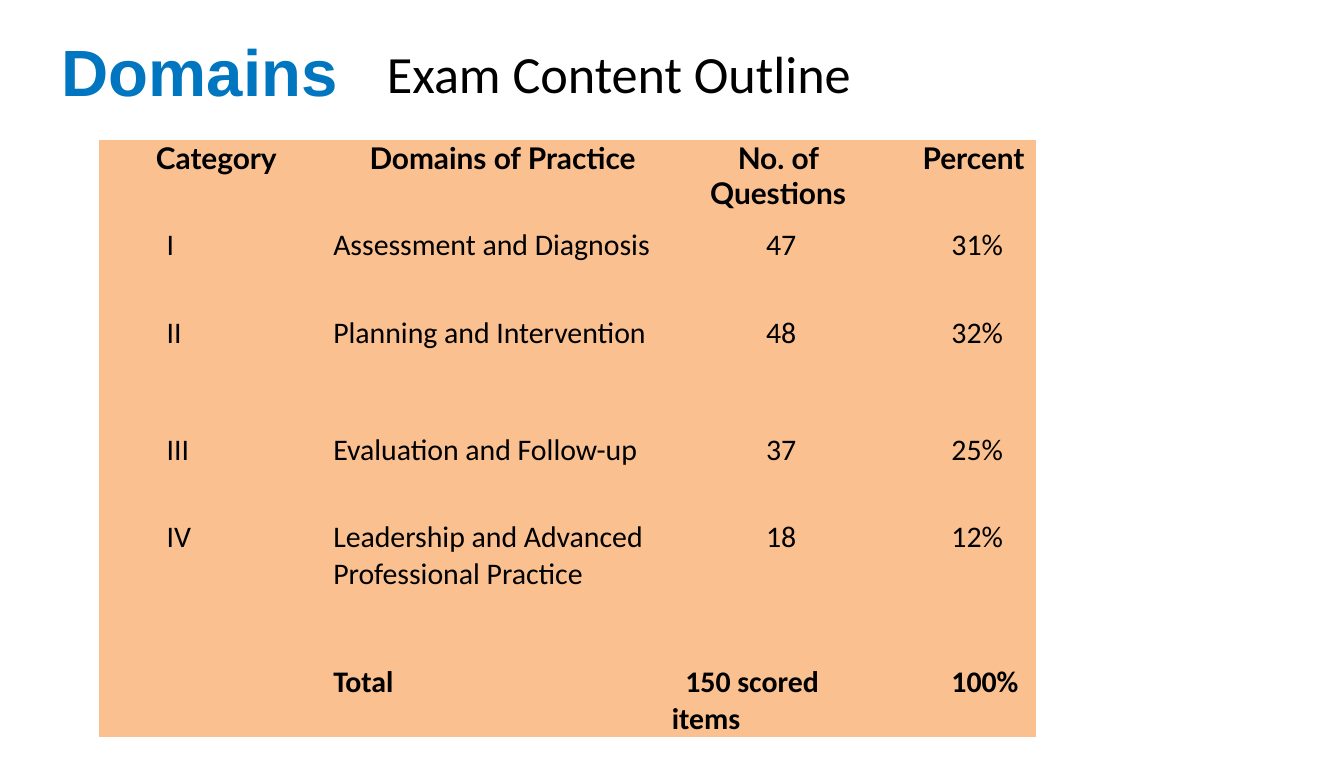
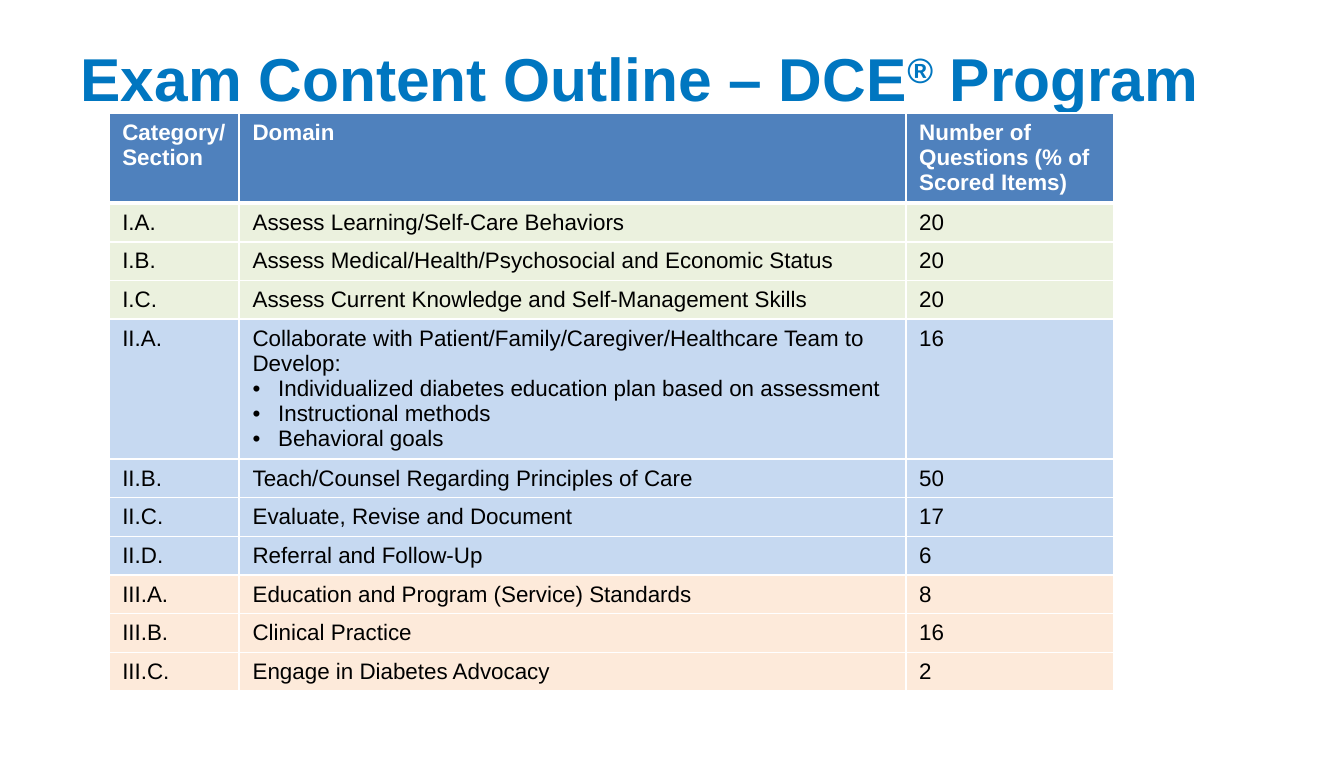
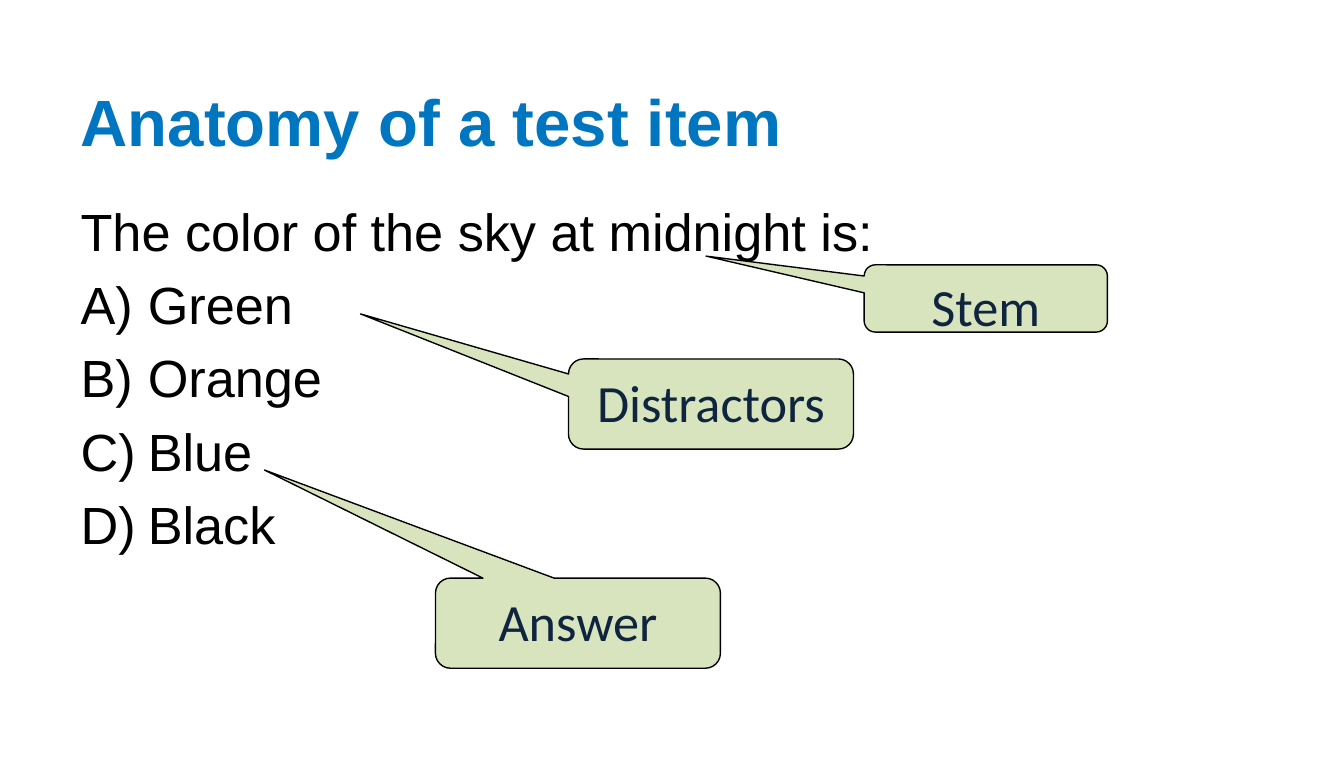
import lxml.etree
import pptx
import pptx.dml.color
import pptx.enum.shapes
import pptx.enum.text
import pptx.oxml.ns
import pptx.util

COLORS = {
    "title": "0076C0", "text": "000000", "white": "FFFFFF", "navy": "0F243E",
    "callout": "D7E4BD", "outline": "FAC090", "header": "4F81BD",
    "assess": "EBF1DE", "plan": "C6D9F1", "standards": "FDEADA",
}
ALIGN = pptx.enum.text.PP_ALIGN
PLAIN_TABLE = "{2D5ABB26-0587-4C30-8999-92F81FD0307C}"


def rgb(name):
    return pptx.dml.color.RGBColor.from_string(COLORS[name])


def child(parent, tag, **attrs):
    return lxml.etree.SubElement(parent, pptx.oxml.ns.qn(tag), attrs)


class Deck:
    """Builds slides on a grid of 100 columns, with rows as tall as columns are wide."""

    def __init__(self):
        self.prs = pptx.Presentation()
        self.prs.slide_width = pptx.util.Inches(10)
        self.prs.slide_height = pptx.util.Inches(5.63)
        self.s = None

    def grid(self, *units):
        return [round(self.prs.slide_width * u / 100) for u in units]

    def place(self, sp, box):
        sp.left, sp.top, sp.width, sp.height = self.grid(*box)
        sp.text_frame.word_wrap = True
        sp.text_frame.auto_size = pptx.enum.text.MSO_AUTO_SIZE.NONE

    def para(self, p, text, size, font="Arial", color="text", bold=False,
             align=ALIGN.LEFT, left=0, first=0, bullet=None):
        p.alignment = align
        pPr = p._p.get_or_add_pPr()
        margin, indent = self.grid(left, first)
        pPr.set("marL", str(margin))
        pPr.set("indent", str(indent))
        if bullet == "A)":
            child(pPr, "a:buFont", typeface="+mj-lt")
            child(pPr, "a:buAutoNum", type="alphaUcParenR")
        elif bullet:
            child(pPr, "a:buFont", typeface="Arial")
            child(pPr, "a:buChar", char=bullet)
        else:
            child(pPr, "a:buNone")
        p.font.size = pptx.util.Pt(size)
        p.font.name = font
        p.font.bold = bold
        p.font.color.rgb = rgb(color)
        for part in text if isinstance(text, tuple) else (text,):
            r = p.add_run()
            r.text = part
            if part == "®":
                r._r.get_or_add_rPr().set("baseline", "30000")

    def fill_text(self, tf, items, **style):
        for i, item in enumerate(items):
            p = tf.paragraphs[0] if i == 0 else tf.add_paragraph()
            text, extra = item if isinstance(item, list) else (item, {})
            self.para(p, text, **{**style, **extra})

    def slide(self, title, box, size=35, layout=5):
        self.s = self.prs.slides.add_slide(self.prs.slide_layouts[layout])
        sp = self.s.shapes.title
        self.place(sp, box)
        sp.text_frame.vertical_anchor = pptx.enum.text.MSO_ANCHOR.MIDDLE
        self.fill_text(sp.text_frame, [title], size=size, color="title", bold=True)

    def body(self, items, box, **style):
        sp = self.s.placeholders[1]
        self.place(sp, box)
        self.fill_text(sp.text_frame, items, **style)
        sp.text_frame.paragraphs[0].space_before = pptx.util.Pt(0)

    def label(self, text, box, **style):
        sp = self.s.shapes.add_textbox(0, 0, 0, 0)
        self.place(sp, box)
        self.fill_text(sp.text_frame, [text], **style)

    def callout(self, text, box, tip):
        kind = pptx.enum.shapes.MSO_SHAPE.ROUNDED_RECTANGULAR_CALLOUT
        sp = self.s.shapes.add_shape(kind, *self.grid(*box))
        self.place(sp, box)
        sp.adjustments[0], sp.adjustments[1] = tip
        sp.shadow.inherit = False
        sp.fill.solid()
        sp.fill.fore_color.rgb = rgb("callout")
        sp.line.color.rgb = rgb("text")
        sp.line.width = pptx.util.Pt(0.75)
        sp.text_frame.vertical_anchor = pptx.enum.text.MSO_ANCHOR.TOP
        self.fill_text(sp.text_frame, [text], size=28, font="Calibri",
                       color="navy", align=ALIGN.CENTER)

    def border(self, cell, row):
        widths = {"L": 1, "R": 1, "T": 3 if row == 1 else 1, "B": 3 if row == 0 else 1}
        for side, width in widths.items():
            ln = child(cell._tc.get_or_add_tcPr(), "a:ln" + side,
                       w=str(pptx.util.Pt(width)))
            child(child(ln, "a:solidFill"), "a:srgbClr", val=COLORS["white"])

    def table(self, at, cols, rows, cells, fills, style, inset=True, lines=False):
        frame = self.s.shapes.add_table(len(rows), len(cols),
                                        *self.grid(*at, sum(cols), sum(rows)))
        tbl = frame.table
        tbl._tbl.tblPr.find(pptx.oxml.ns.qn("a:tableStyleId")).text = PLAIN_TABLE
        for col, width in zip(tbl.columns, self.grid(*cols)):
            col.width = width
        for row, height in zip(tbl.rows, self.grid(*rows)):
            row.height = height
        for i, line in enumerate(cells):
            for j, items in enumerate(line):
                cell = tbl.cell(i, j)
                if not inset:
                    cell.margin_left = cell.margin_right = 0
                    cell.margin_top = cell.margin_bottom = 0
                if lines:
                    self.border(cell, i)
                cell.fill.solid()
                cell.fill.fore_color.rgb = rgb(fills[i])
                if items:
                    items = items if isinstance(items, tuple) else (items,)
                    self.fill_text(cell.text_frame, items, **style(i, j))


def domains(deck):
    cells = [
        ["Category", "Domains of Practice", "No. of Questions", "Percent"],
        ["I", "Assessment and Diagnosis", "47", "31%"],
        ["II", "Planning and Intervention", "48", "32%"],
        ["III", "Evaluation and Follow-up", "37", "25%"],
        ["IV", "Leadership and Advanced Professional Practice", "18", "12%"],
        ["", "Total", ["150 scored items", {"left": 0, "first": 1}], "100%"],
    ]

    def style(i, j):
        if i == 0:
            return dict(size=16, font="Lato", bold=True, align=ALIGN.CENTER,
                        left=2 if j == 3 else 0)
        return dict(size=16, font="Calibri", bold=i == 5, left=(5, 0, 7, 5)[j])

    deck.slide("Domains", (3.6, 2.6, 90, 5.3))
    deck.table((7.4, 10.4), (17.4, 25.2, 15.8, 11.3), (6.5, 6.5, 8.7, 6.5, 10.8, 5.4),
               cells, ["outline"] * 6, style, inset=False)
    deck.label("Exam Content Outline", (27.8, 2.6, 47.9, 5.7), size=28, font="Calibri")


def program(deck):
    bullet = {"left": 1.9, "first": -1.9, "bullet": "•"}
    develop = (
        "Collaborate with Patient/Family/Caregiver/Healthcare Team to Develop:",
        ["Individualized diabetes education plan based on assessment", bullet],
        ["Instructional methods", bullet],
        ["Behavioral goals", bullet],
    )
    cells = [
        ["Category/Section", "Domain", "Number of Questions (% of Scored Items)"],
        ["I.A.", "Assess Learning/Self-Care Behaviors", "20"],
        ["I.B.", "Assess Medical/Health/Psychosocial and Economic Status", "20"],
        ["I.C.", "Assess Current Knowledge and Self-Management Skills", "20"],
        ["II.A.", develop, "16"],
        ["II.B.", "Teach/Counsel Regarding Principles of Care", "50"],
        ["II.C.", "Evaluate, Revise and Document", "17"],
        ["II.D.", "Referral and Follow-Up", "6"],
        ["III.A.", "Education and Program (Service) Standards", "8"],
        ["III.B.", "Clinical Practice", "16"],
        ["III.C.", "Engage in Diabetes Advocacy", "2"],
    ]
    fills = ["header"] + ["assess"] * 3 + ["plan"] * 4 + ["standards"] * 3
    rows = [6.7] + [2.88] * 3 + [10.4] + [2.88] * 6

    def style(i, j):
        return dict(size=12, bold=i == 0, color="text" if i else "white")

    deck.slide(("Exam Content Outline – DCE", "®", " Program"), (5, 1.9, 90, 7.7), 32.4)
    deck.table((8.1, 8.4), (9.7, 49.6, 15.5), rows, cells, fills, style, lines=True)


def anatomy(deck):
    answers = [[a, {"bullet": "A)"}] for a in ("Green", "Orange", "Blue", "Black")]
    deck.slide("Anatomy of a test item", (5, 6.3, 90, 5.3), layout=1)
    deck.body(["The color of the sky at midnight is:"] + answers, (5, 14.3, 90, 36),
              size=28, left=5, first=-5)
    deck.callout("Stem", (64.3, 19.7, 18.1, 5), (-1.15, -0.63))
    deck.callout("Distractors", (42.3, 26.7, 21.2, 6.7), (-1.23, -1))
    deck.callout("Answer", (32.4, 43, 21.2, 6.7), (-1.1, -1.7))


def main():
    deck = Deck()
    domains(deck)
    program(deck)
    anatomy(deck)
    deck.prs.save("out.pptx")


if __name__ == "__main__":
    main()
